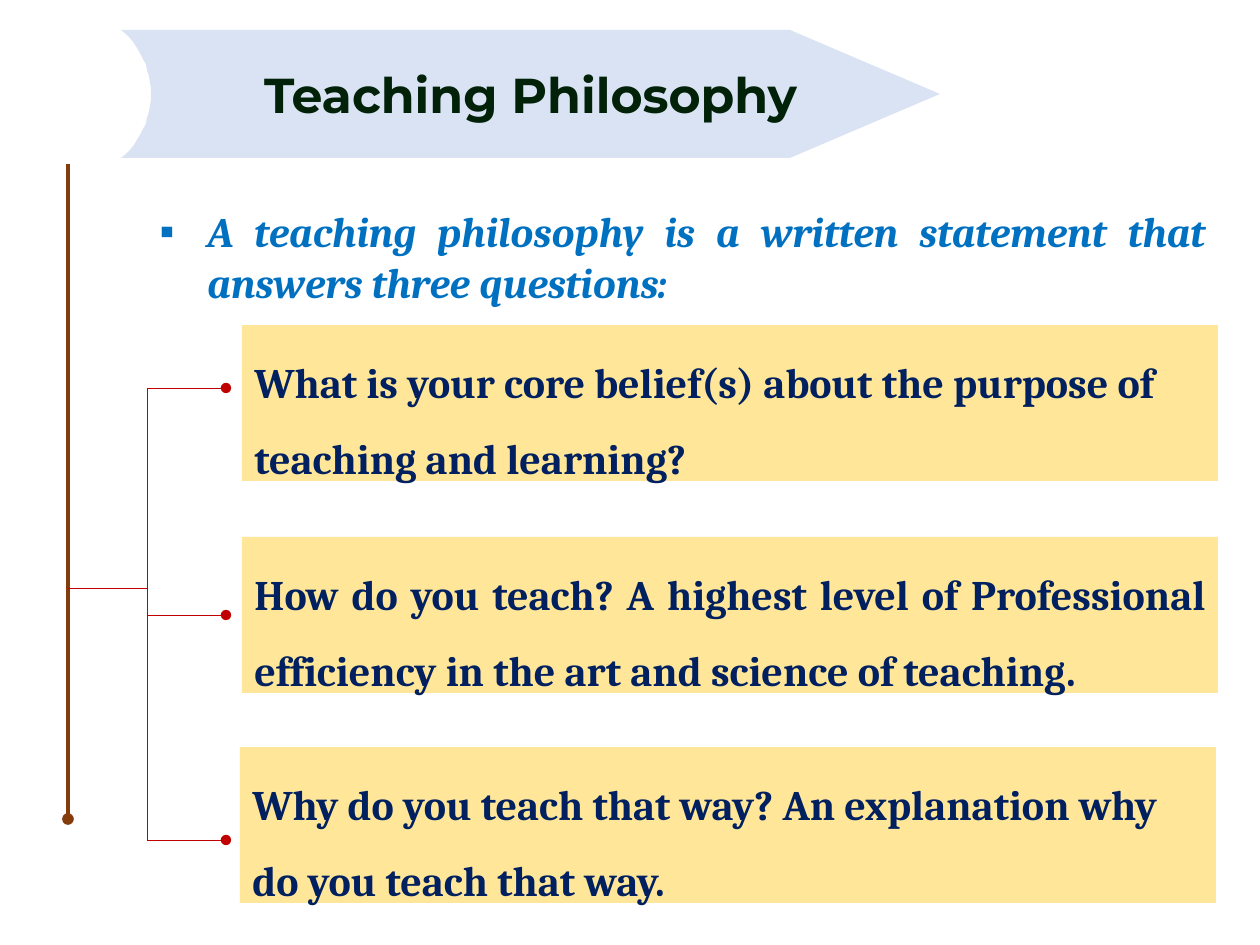
from math import asin, cos, sin

from lxml.etree import SubElement
from pptx import Presentation
from pptx.dml.color import RGBColor
from pptx.enum.shapes import MSO_CONNECTOR, MSO_SHAPE
from pptx.enum.text import MSO_ANCHOR, MSO_AUTO_SIZE, PP_ALIGN
from pptx.oxml.ns import qn
from pptx.util import Emu, Inches, Pt

COLORS = {
    "spine": "843C0B", "banner": "DAE3F3", "title": "012109", "branch": "C00000",
    "card": "FFE699", "card_text": "002060", "intro": "0070C0", "white": "FFFFFF",
}
PX = 914400 / 126

TITLE = {"size": Pt(28), "name": "Montserrat", "bold": True}
CARD = {"size": Pt(24), "name": "Cambria", "bold": True}
INTRO = {**CARD, "italic": True}


def px(length):
    return Emu(round(length * PX))


class SlideBuilder:
    def __init__(self, page):
        self.page = page

    def paint(self, shape, color):
        shape.fill.solid()
        shape.fill.fore_color.rgb = RGBColor.from_string(COLORS[color])

    def paint_plain(self, shape, color):
        """Fill an autoshape and strip its outline and shadow."""
        self.paint(shape, color)
        shape.line.fill.background()
        shape.shadow.inherit = False

    def place(self, shape, left, top, width, height):
        shape.left, shape.top, shape.width, shape.height = map(px, (left, top, width, height))

    def set_text(self, shape, text, font, color, frame_format, para_format):
        frame = shape.text_frame
        frame.word_wrap = True
        para = frame.paragraphs[0]
        span = para.add_run()
        span.text = text
        for target, values in ((frame, frame_format), (para, para_format), (span.font, font)):
            for name, value in values.items():
                setattr(target, name, value)
        span.font.color.rgb = RGBColor.from_string(COLORS[color])
        return para

    def line(self, start, end, color, width, oval_end=False):
        line = self.page.shapes.add_connector(MSO_CONNECTOR.STRAIGHT, *map(px, start + end))
        line.line.color.rgb = RGBColor.from_string(COLORS[color])
        line.line.width = Pt(width)
        properties = line._element.spPr
        if oval_end:
            SubElement(properties.find(qn("a:ln")), qn("a:tailEnd"), type="oval")
        SubElement(properties, qn("a:effectLst"))

    def banner(self, left, top, width, height, point, notch):
        """Draw an arrow with a circular notch cut into its left side."""
        half = height / 2
        middle = top + half
        radius = (notch ** 2 + half ** 2) / (2 * notch)
        center = left + notch - radius
        sweep = asin(half / radius)
        steps = 24
        angles = [sweep * (1 - 2 * step / steps) for step in range(steps + 1)]
        arc = [(center + radius * cos(angle), middle + radius * sin(angle)) for angle in angles]
        right = left + width
        outline = [(right - point, top), (right, middle), (right - point, top + height)] + arc
        builder = self.page.shapes.build_freeform(*outline[0], scale=PX)
        builder.add_line_segments(outline[1:], close=True)
        self.paint_plain(builder.convert_to_shape(), "banner")

    def title(self, text, *bounds):
        box = self.page.shapes.title
        self.place(box, *bounds)
        self.set_text(box, text, TITLE, "title",
                      {"auto_size": MSO_AUTO_SIZE.NONE, "vertical_anchor": MSO_ANCHOR.MIDDLE},
                      {"alignment": PP_ALIGN.CENTER})
        self.bring_to_front(box)

    def bullet(self, text, *bounds):
        box = self.page.placeholders[1]
        self.place(box, *bounds)
        self.paint(box, "white")
        para = self.set_text(box, text, INTRO, "intro",
                             {"auto_size": MSO_AUTO_SIZE.NONE,
                              "vertical_anchor": MSO_ANCHOR.MIDDLE},
                             {"alignment": PP_ALIGN.JUSTIFY, "space_before": Pt(0)})
        properties = para._p.get_or_add_pPr()
        indent = Inches(0.38)
        properties.set("marL", str(indent))
        properties.set("indent", str(-indent))
        SubElement(properties, qn("a:buChar"), char="▪")
        self.bring_to_front(box)

    def card(self, text, alignment, *bounds):
        box = self.page.shapes.add_shape(MSO_SHAPE.RECTANGLE, *map(px, bounds))
        self.paint_plain(box, "card")
        self.set_text(box, text, CARD, "card_text",
                      {"auto_size": MSO_AUTO_SIZE.SHAPE_TO_FIT_TEXT,
                       "vertical_anchor": MSO_ANCHOR.TOP},
                      {"alignment": alignment, "line_spacing": 1.5})

    def bring_to_front(self, shape):
        self.page.shapes._spTree.append(shape._element)


def main():
    deck = Presentation()
    deck.slide_width, deck.slide_height = Inches(10), Inches(7.5)
    slide = SlideBuilder(deck.slides.add_slide(deck.slide_layouts[1]))

    spine, trunk, branch_end = 68, 147, 226
    branches = (388, 615, 840)
    slide.line((spine, 164), (spine, 819), "spine", 2.25, oval_end=True)
    slide.banner(121, 30, 819, 128, point=150, notch=30)
    slide.title("Teaching Philosophy", 121, 30, 819, 128)

    slide.line((spine, 588), (trunk, 588), "branch", 0.5)
    slide.line((trunk, branches[0]), (trunk, branches[-1]), "branch", 0.5)
    for height in branches:
        slide.line((trunk, height), (branch_end, height), "branch", 0.5, oval_end=True)

    cards = (
        ("What is your core belief(s) about the purpose of teaching and learning?",
         PP_ALIGN.LEFT, 242, 325),
        ("How do you teach? A highest level of Professional efficiency in the art "
         "and science of teaching.", PP_ALIGN.JUSTIFY, 242, 537),
        ("Why do you teach that way? An explanation why do you teach that way.",
         PP_ALIGN.LEFT, 240, 747),
    )
    for text, alignment, left, top in cards:
        slide.card(text, alignment, left, top, 976, 156)

    slide.bullet("A teaching philosophy is a written statement that answers three questions:",
                 147, 200, 1071, 112)
    deck.save("out.pptx")


if __name__ == "__main__":
    main()
